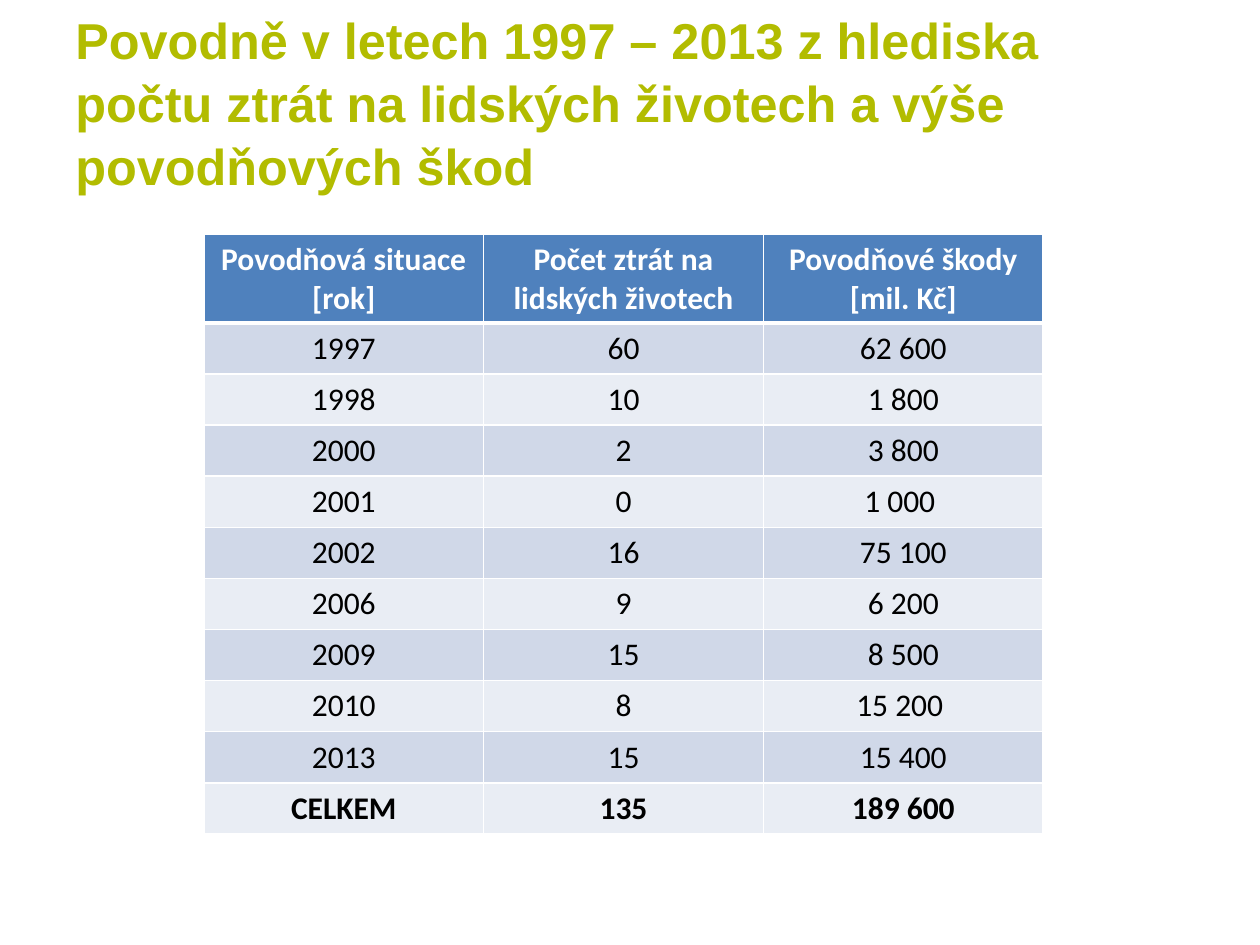
"""Build a slide with a table of flood losses in 1997 – 2013."""
from lxml import etree
from pptx import Presentation
from pptx.dml.color import RGBColor
from pptx.enum.text import MSO_ANCHOR, PP_ALIGN
from pptx.oxml.ns import qn
from pptx.util import Cm, Pt

MIDDLE = MSO_ANCHOR.MIDDLE
CENTER = PP_ALIGN.CENTER
COLORS = {
    "title": "B2BC00",
    "head": "4F81BD",
    "odd": "D0D8E8",
    "even": "E9EDF4",
    "light": "FFFFFF",
    "dark": "000000",
}
ROWS = [
    ("Povodňová situace [rok]", "Počet ztrát na lidských životech", "Povodňové škody [mil. Kč]"),
    ("1997", "60", "62 600"),
    ("1998", "10", "1 800"),
    ("2000", "2", "3 800"),
    ("2001", "0", "1 000 "),
    ("2002", "16", "75 100"),
    ("2006", "9", "6 200"),
    ("2009", "15", "8 500"),
    ("2010", "8", "15 200 "),
    ("2013", "15", "15 400"),
    ("CELKEM", "135", "189 600"),
]
HEAD, LINE, WIDTH = 1.78, 1.03, 5.64


def add_run(para, text, font, size, color, bold):
    run = para.add_run()
    run.text = text
    run.font.name = font
    run.font.size = Pt(size)
    run.font.bold = bold
    run.font.color.rgb = RGBColor.from_string(COLORS[color])


def add_edge(cell, side, width):
    props = cell._tc.get_or_add_tcPr()
    edge = etree.SubElement(props, qn(f"a:ln{side}"), w=str(Pt(width)))
    fill = etree.SubElement(edge, qn("a:solidFill"))
    etree.SubElement(fill, qn("a:srgbClr"), val=COLORS["light"])


deck = Presentation()
deck.slide_width = Cm(25.4)
deck.slide_height = Cm(19.05)
slide = deck.slides.add_slide(deck.slide_layouts[6])

title = slide.shapes.add_textbox(Cm(1.27), Cm(0.76), Cm(22.86), Cm(2.57))
frame = title.text_frame
frame.word_wrap = True
frame.vertical_anchor = MIDDLE
para = frame.paragraphs[0]
para.line_spacing = 1.04
add_run(
    para,
    "Povodně v letech 1997 – 2013 z hlediska počtu ztrát na lidských životech a výše povodňových škod",
    "Arial", 28.8, "title", True,
)

last = len(ROWS) - 1
table = slide.shapes.add_table(
    len(ROWS), 3, Cm(4.11), Cm(4.73), Cm(3 * WIDTH), Cm(HEAD + last * LINE)
).table
for col in table.columns:
    col.width = Cm(WIDTH)

for r, texts in enumerate(ROWS):
    table.rows[r].height = Cm(LINE if r else HEAD)
    shade = "head" if r == 0 else "odd" if r % 2 else "even"
    for c, text in enumerate(texts):
        cell = table.cell(r, c)
        edges = {"L": 1, "R": 1, "T": 3 if r == 1 else 1, "B": 1 if r else 3}
        for side, width in edges.items():
            add_edge(cell, side, width)
        cell.fill.solid()
        cell.fill.fore_color.rgb = RGBColor.from_string(COLORS[shade])
        para = cell.text_frame.paragraphs[0]
        para.alignment = CENTER
        add_run(para, text, "Calibri", 18, "dark" if r else "light", r in (0, last))

deck.save("out.pptx")
